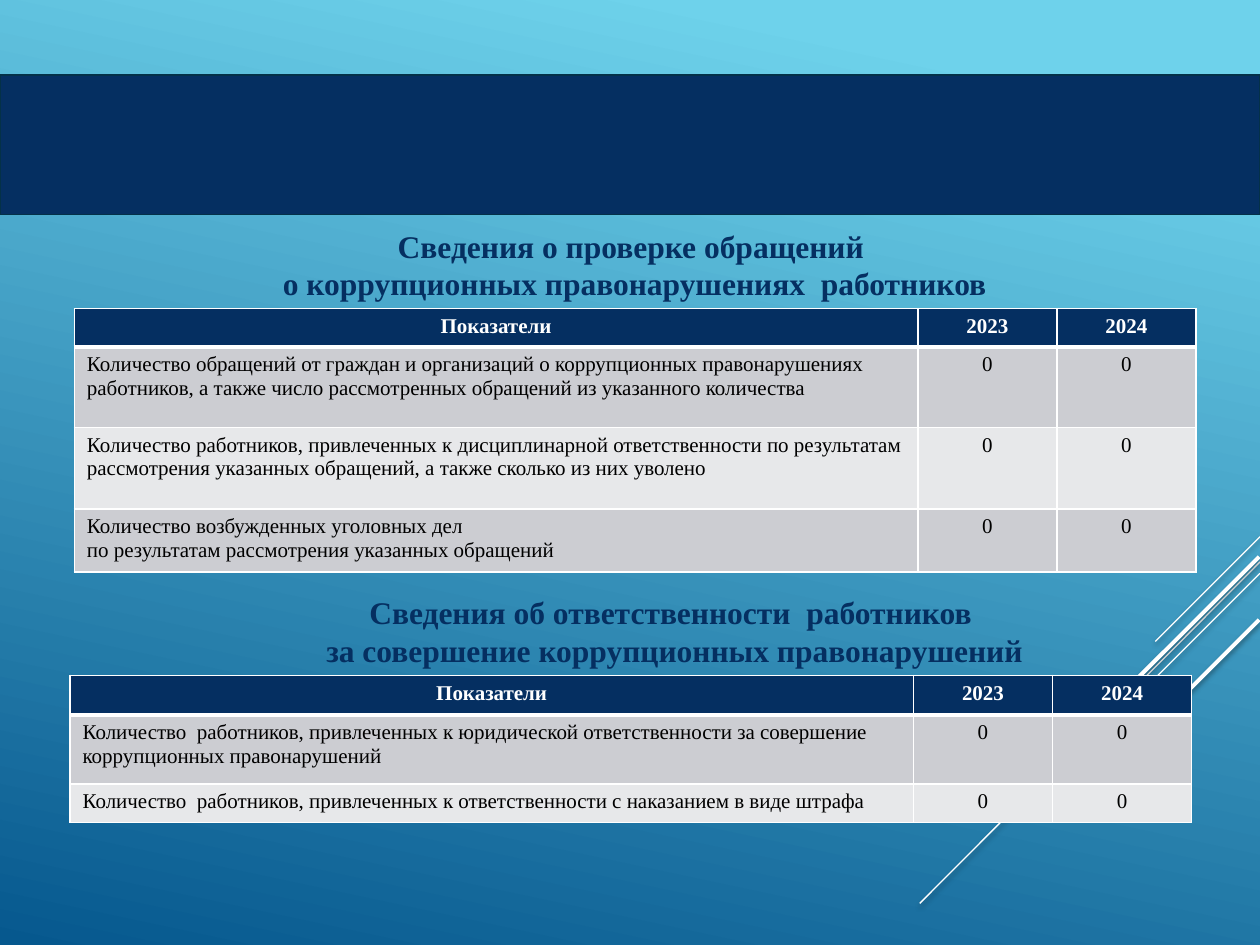
import pptx
import pptx.dml.color
import pptx.enum.shapes
import pptx.enum.text
import pptx.oxml
import pptx.oxml.ns
import pptx.util

Pt = pptx.util.Pt
RGBColor = pptx.dml.color.RGBColor
ALIGN = pptx.enum.text.PP_ALIGN

NAVY = RGBColor(0x05, 0x2F, 0x61)
BAND_EDGE = RGBColor(0x04, 0x31, 0x48)
SKY = RGBColor(0x6E, 0xD2, 0xEB)
OCEAN = RGBColor(0x06, 0x58, 0x8E)
WHITE = RGBColor(0xFF, 0xFF, 0xFF)
BLACK = RGBColor(0, 0, 0)
ROW_FILLS = (RGBColor(0xE7, 0xE8, 0xEA), RGBColor(0xCC, 0xCD, 0xD2))

FONT = "Times New Roman"
HEADING = {"name": FONT, "size": Pt(18), "bold": True}
TABLE_HEADER = {"name": FONT, "size": Pt(12), "bold": True}
TABLE_BODY = {"name": FONT, "size": Pt(12), "bold": False}
COLUMN_WIDTHS = (482, 79.5, 79.5)
COLUMN_TITLES = ("Показатели", "2023", "2024")

# start x, start y, end x, end y, line width
DIAGONALS = (
    (720, 306.7, 660.2, 366.5, 0.75),
    (720, 321.1, 525.6, 516.2, 0.75),
    (720, 327.6, 596.2, 451.4, 0.75),
    (719.5, 318.2, 606.2, 431.3, 2.25),
    (719.5, 354.2, 637.2, 436.3, 2.25),
)

CORRUPTION_REPORTS = (
    "Количество обращений от граждан и организаций о коррупционных правонарушениях  "
    "работников, а также число рассмотренных обращений из указанного количества",
    "Количество работников, привлеченных к дисциплинарной ответственности по результатам "
    "рассмотрения указанных обращений, а также сколько из них уволено",
    "Количество возбужденных уголовных дел\nпо результатам рассмотрения указанных обращений",
)
LIABILITY = (
    "Количество  работников, привлеченных к юридической ответственности "
    "за совершение коррупционных правонарушений",
    "Количество  работников, привлеченных к ответственности с наказанием в виде штрафа",
)


def write_text(text_frame, text, alignment, color, font_format):
    text_frame.text = text
    for paragraph in text_frame.paragraphs:
        paragraph.alignment = alignment
        for run in paragraph.runs:
            for name, value in font_format.items():
                setattr(run.font, name, value)
            run.font.color.rgb = color


def paint_background(slide):
    fill = slide.background.fill
    fill.gradient()
    fill.gradient_angle = 258
    for stop, position, color in zip(fill.gradient_stops, (0.1, 1), (SKY, OCEAN)):
        stop.position = position
        stop.color.rgb = color


def add_diagonal(slide, start_x, start_y, end_x, end_y, width):
    """Add a white line with a soft shadow below it."""
    line = slide.shapes.add_connector(
        pptx.enum.shapes.MSO_CONNECTOR.STRAIGHT,
        Pt(start_x), Pt(start_y), Pt(end_x), Pt(end_y))
    line.line.color.rgb = WHITE
    line.line.width = Pt(width)
    line._element.spPr.append(pptx.oxml.parse_xml(
        f'<a:effectLst {pptx.oxml.ns.nsdecls("a")}>'
        f'<a:outerShdw blurRad="{Pt(3.1)}" dist="{Pt(1.6)}" dir="5400000">'
        f'<a:srgbClr val="{BLACK}"><a:alpha val="38000"/></a:srgbClr>'
        '</a:outerShdw></a:effectLst>'))


def add_title_band(slide):
    band = slide.shapes.add_shape(
        pptx.enum.shapes.MSO_SHAPE.FLOWCHART_PROCESS, 0, Pt(43), Pt(720), Pt(79.5))
    band.shadow.inherit = False
    band.fill.solid()
    band.fill.fore_color.rgb = NAVY
    band.line.color.rgb = BAND_EDGE
    band.line.width = Pt(1)


def add_heading(slide, left, top, width, text):
    box = slide.shapes.add_textbox(Pt(left), Pt(top), Pt(width), Pt(50.5))
    box.text_frame.word_wrap = True
    write_text(box.text_frame, text, ALIGN.CENTER, NAVY, HEADING)


def set_borders(cell, top, bottom):
    """Draw white borders; top and bottom are widths in points."""
    properties = cell._tc.get_or_add_tcPr()
    for side, width in (("L", 1), ("R", 1), ("T", top), ("B", bottom)):
        properties.append(pptx.oxml.parse_xml(
            f'<a:ln{side} {pptx.oxml.ns.nsdecls("a")} w="{Pt(width)}">'
            f'<a:solidFill><a:srgbClr val="{WHITE}"/></a:solidFill></a:ln{side}>'))


def add_indicator_table(slide, left, top, row_heights, indicators):
    rows = [COLUMN_TITLES] + [(indicator, "0", "0") for indicator in indicators]
    table = slide.shapes.add_table(
        len(rows), len(COLUMN_WIDTHS), Pt(left), Pt(top),
        Pt(sum(COLUMN_WIDTHS)), Pt(sum(row_heights))).table
    for column, width in zip(table.columns, COLUMN_WIDTHS):
        column.width = Pt(width)
    for row_index, (texts, height) in enumerate(zip(rows, row_heights)):
        table.rows[row_index].height = Pt(height)
        is_header = row_index == 0
        for column_index, text in enumerate(texts):
            cell = table.cell(row_index, column_index)
            set_borders(cell, 3 if row_index == 1 else 1, 3 if is_header else 1)
            cell.fill.solid()
            cell.fill.fore_color.rgb = NAVY if is_header else ROW_FILLS[row_index % 2]
            centered = is_header or column_index > 0
            write_text(cell.text_frame, text,
                       ALIGN.CENTER if centered else ALIGN.LEFT,
                       WHITE if is_header else BLACK,
                       TABLE_HEADER if is_header else TABLE_BODY)


def main():
    presentation = pptx.Presentation()
    presentation.slide_width = Pt(720)
    presentation.slide_height = Pt(540)
    slide = presentation.slides.add_slide(presentation.slide_layouts[6])

    paint_background(slide)
    for diagonal in DIAGONALS:
        add_diagonal(slide, *diagonal)
    add_title_band(slide)
    add_indicator_table(slide, 42.5, 176.3, (22, 46, 46.5, 36), CORRUPTION_REPORTS)
    add_heading(slide, 48, 126, 629.5,
                "Сведения о проверке обращений \vо коррупционных правонарушениях  работников")
    add_heading(slide, 51, 335.5, 669,
                "Сведения об ответственности  работников \vза совершение коррупционных правонарушений")
    add_indicator_table(slide, 40, 386, (22.5, 39.5, 22), LIABILITY)

    presentation.save("out.pptx")


if __name__ == "__main__":
    main()
